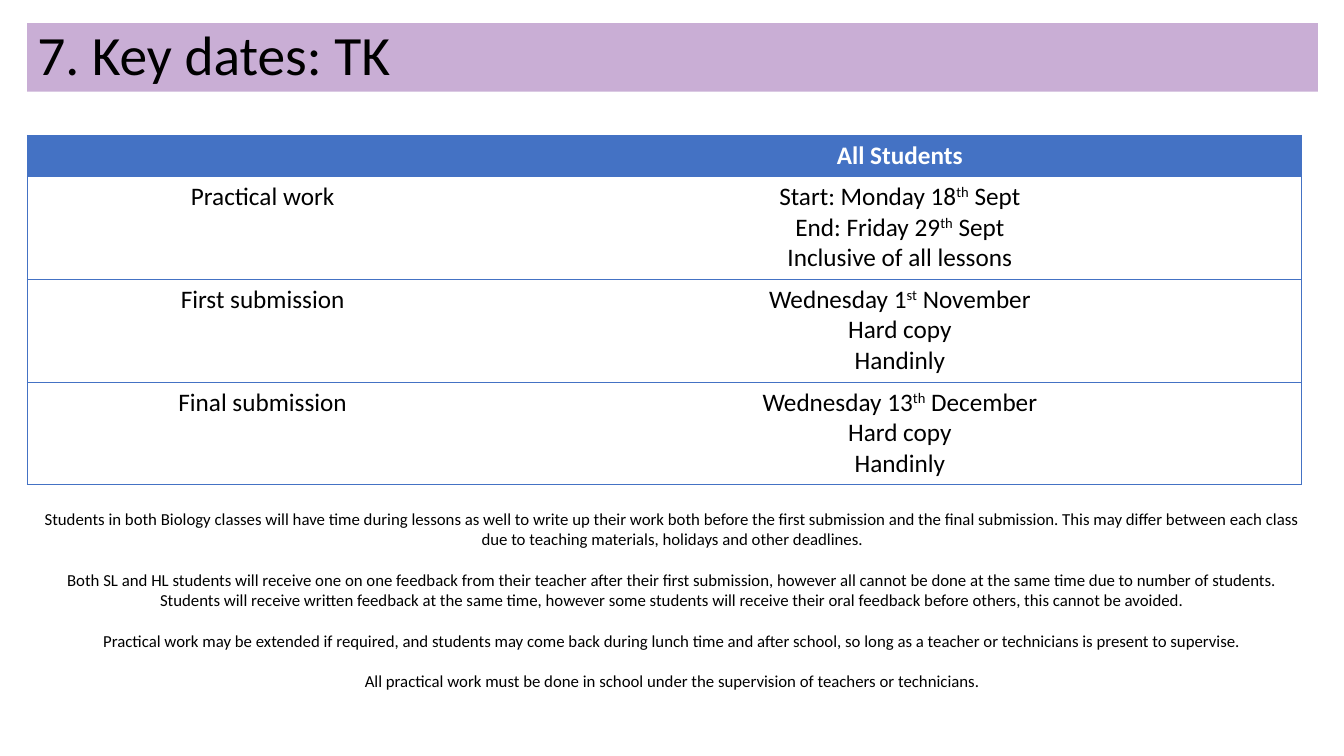
import pptx
import pptx.util
import pptx.dml.color
import pptx.enum.text
import pptx.oxml
import pptx.oxml.ns

inch = pptx.util.Inches
center = pptx.enum.text.PP_ALIGN.CENTER
blue, white, black = "4472C4", "FFFFFF", "000000"


def color(code):
    return pptx.dml.color.RGBColor.from_string(code)


def add_run(para, text, size, code=black, bold=False, raised=False):
    run = para.add_run()
    run.text = text
    font = run.font
    font.name, font.size, font.bold = "Calibri", pptx.util.Pt(size), bold
    font.color.rgb = color(code)
    if raised:
        font._element.set("baseline", "30000")


# Slide and shared grid
deck = pptx.Presentation()
deck.slide_width, deck.slide_height = inch(13.33), inch(7.5)
slide = deck.slides.add_slide(deck.slide_layouts[5])
left, wide = inch(0.27), inch(12.8)

# Title bar
title = slide.shapes.title
title.left, title.top, title.width, title.height = left, inch(0.23), wide, inch(0.68)
title.fill.solid()
title.fill.fore_color.rgb = color("C9AED5")
frame = title.text_frame
frame.auto_size = pptx.enum.text.MSO_AUTO_SIZE.NONE
frame.vertical_anchor = pptx.enum.text.MSO_ANCHOR.MIDDLE
para = frame.paragraphs[0]
para.alignment = pptx.enum.text.PP_ALIGN.LEFT
para.line_spacing = 0.9
add_run(para, "7. Key dates: TK", 39.6)

# Table of dates: each cell is a list of lines, "^" sets off raised text
dates = [
    [[], ["All Students"]],
    [["Practical work"],
     ["Start: Monday 18^th^ Sept", "End: Friday 29^th^ Sept", "Inclusive of all lessons"]],
    [["First submission"],
     ["Wednesday 1^st^ November", "Hard copy", "Handinly"]],
    [["Final submission"],
     ["Wednesday 13^th^ December", "Hard copy", "Handinly"]],
]
widths, heights = [4.67, 7.97], [0.41] + [1.02] * 3
table = slide.shapes.add_table(len(heights), len(widths), left, inch(1.34),
                               inch(sum(widths)), inch(sum(heights))).table
table.horz_banding = False
for col, width in zip(table.columns, widths):
    col.width = inch(width)
for r, (row, height) in enumerate(zip(dates, heights)):
    table.rows[r].height = inch(height)
    head = r == 0
    for c, lines in enumerate(row):
        cell = table.cell(r, c)
        # Borders all round, except between the columns
        inner = "R" if c == 0 else "L"
        props = cell._tc.get_or_add_tcPr()
        for side in "LRTB":
            paint = ("<a:noFill/>" if side == inner else
                     f'<a:solidFill><a:srgbClr val="{blue}"/></a:solidFill>')
            props.append(pptx.oxml.parse_xml(
                f'<a:ln{side} {pptx.oxml.ns.nsdecls("a")} w="6350">{paint}</a:ln{side}>'))
        cell.fill.solid()
        cell.fill.fore_color.rgb = color(blue if head else white)
        for n, line in enumerate(lines):
            frame = cell.text_frame
            para = frame.add_paragraph() if n else frame.paragraphs[0]
            para.alignment = center
            for k, part in enumerate(line.split("^")):
                add_run(para, part, 18, white if head else black, head, k % 2 == 1)

# Notes below the table
notes = [
    "Students in both Biology classes will have time during lessons as well to write up "
    "their work both before the first submission and the final submission. This may differ "
    "between each class due to teaching materials, holidays and other deadlines.",
    "Both SL and HL students will receive one on one feedback from their teacher after "
    "their first submission, however all cannot be done at the same time due to number of "
    "students. Students will receive written feedback at the same time, however some "
    "students will receive their oral feedback before others, this cannot be avoided.",
    "Practical work may be extended if required, and students may come back during lunch "
    "time and after school, so long as a teacher or technicians is present to supervise.",
    "All practical work must be done in school under the supervision of teachers or "
    "technicians.",
]
frame = slide.shapes.add_textbox(left, inch(5), wide, inch(1.92)).text_frame
frame.word_wrap = True
for n, note in enumerate(notes):
    para = frame.add_paragraph() if n else frame.paragraphs[0]
    para.alignment = center
    para.space_before = pptx.util.Pt(14.6 if n else 0)
    add_run(para, note, 12)

deck.save("out.pptx")
